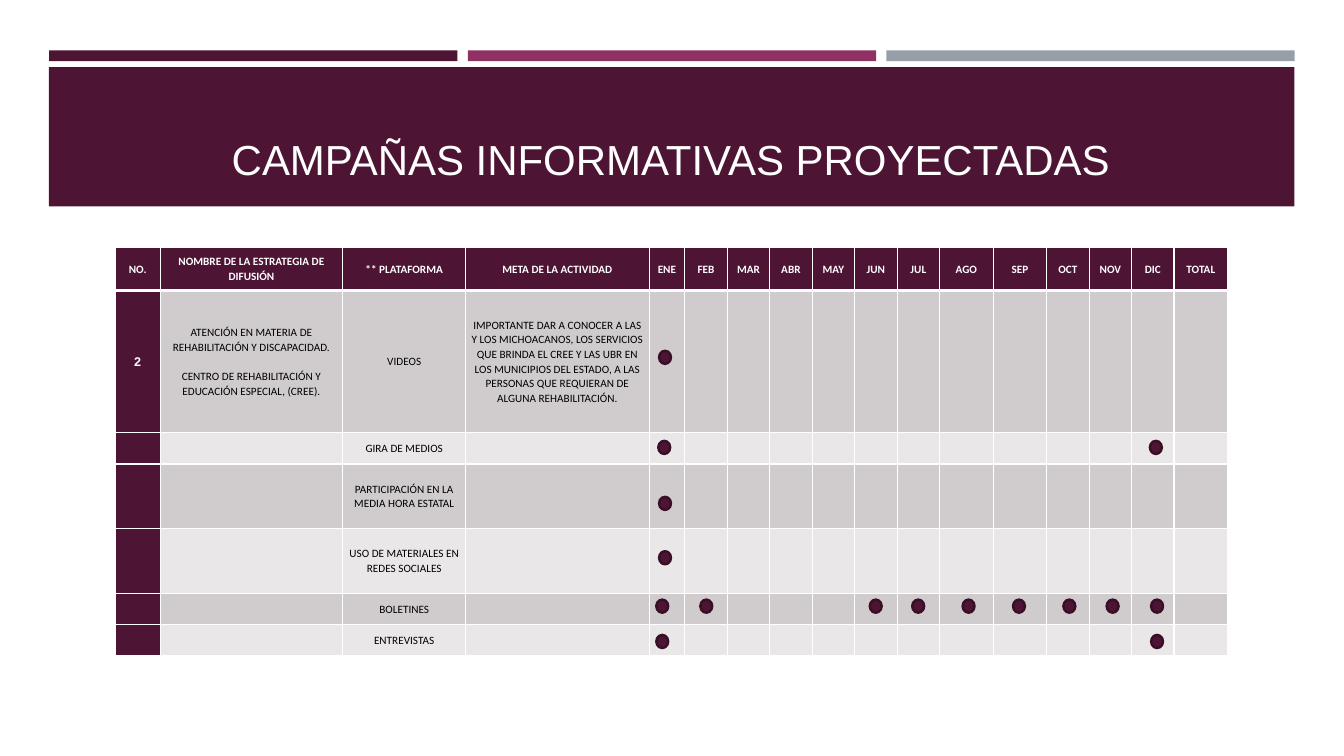
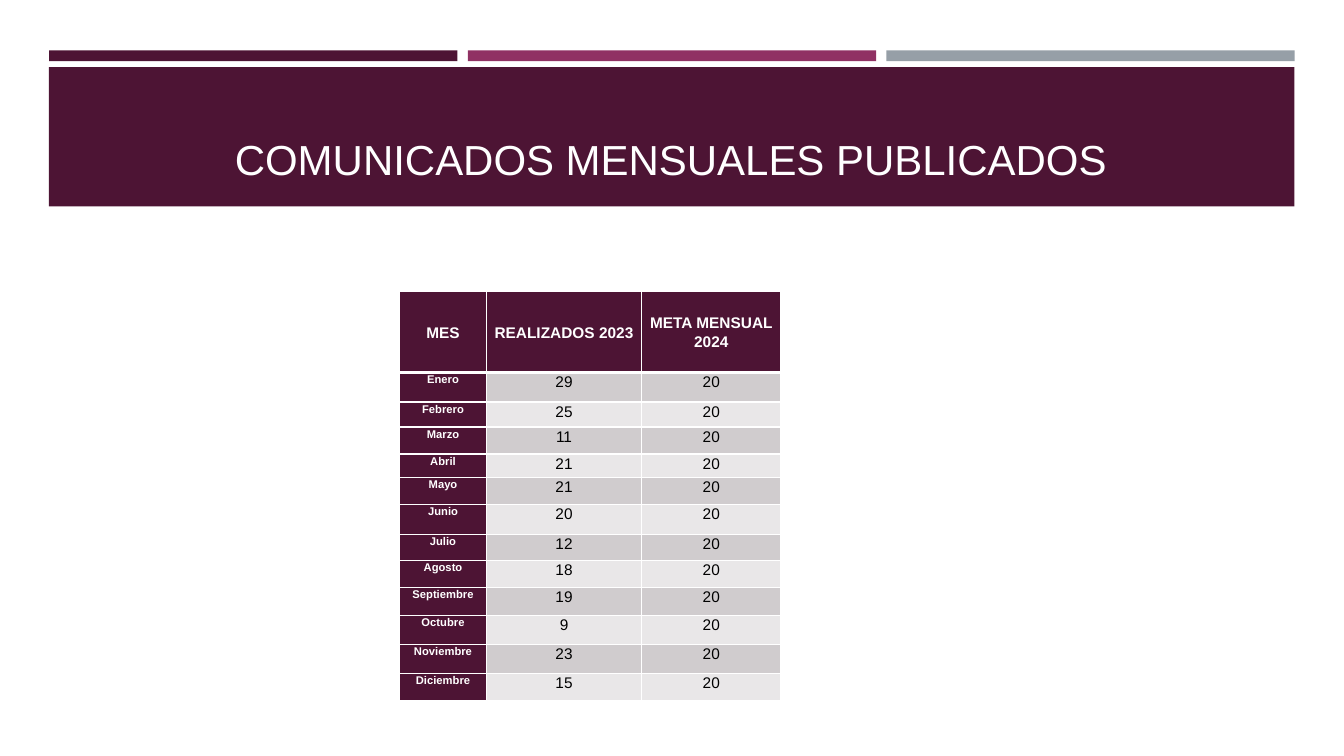
from lxml.etree import SubElement
from pptx import Presentation
from pptx.dml.color import RGBColor
from pptx.enum.shapes import MSO_SHAPE as SHAPE
from pptx.enum.text import MSO_ANCHOR as ANCHOR, PP_ALIGN as ALIGN
from pptx.oxml.ns import qn
from pptx.util import Cm, Pt

CLARET = RGBColor(0x4D, 0x14, 0x34)
CLARET_DARK = RGBColor(0x39, 0x0F, 0x26)
PLUM = RGBColor(0x90, 0x31, 0x63)
STEEL = RGBColor(0x96, 0x9F, 0xA7)
WHITE = RGBColor(0xFF, 0xFF, 0xFF)
BLACK = RGBColor(0, 0, 0)
STRIPES = (RGBColor(0xE9, 0xE7, 0xE8), RGBColor(0xD0, 0xCC, 0xCE))

BAND_LEFT, BAND_PITCH, BAND_WIDTH = 1.24, 10.55, 10.29
LINE_SPACING = 1.07

CAMPAIGN_WIDTHS = [1.14, 4.6, 3.1, 4.62, 0.9] + [1.07] * 6 + [1.35] * 2 + [1.07] * 3 + [1.35]
CAMPAIGN_HEIGHTS = [1.09, 3.58, 0.79, 1.63, 1.63, 0.79, 0.79]
CAMPAIGN_HEADER = [
    "NO.", "NOMBRE DE LA ESTRATEGIA DE DIFUSIÓN", "** PLATAFORMA", "META DE LA ACTIVIDAD",
    "ENE", "FEB", "MAR", "ABR", "MAY", "JUN", "JUL", "AGO", "SEP", "OCT", "NOV", "DIC", "TOTAL",
]
STRATEGY = (
    "ATENCIÓN EN MATERIA DE REHABILITACIÓN Y DISCAPACIDAD.\n"
    "CENTRO DE REHABILITACIÓN Y EDUCACIÓN ESPECIAL, (CREE)."
)
GOAL = (
    "IMPORTANTE DAR A CONOCER A LAS Y LOS MICHOACANOS, LOS SERVICIOS QUE BRINDA EL CREE "
    "Y LAS UBR EN LOS MUNICIPIOS DEL ESTADO, A LAS PERSONAS QUE REQUIERAN DE ALGUNA "
    "REHABILITACIÓN."
)
OTHER_PLATFORMS = [
    "GIRA DE MEDIOS", "PARTICIPACIÓN EN LA MEDIA HORA ESTATAL",
    "USO DE MATERIALES EN REDES SOCIALES", "BOLETINES", "ENTREVISTAS",
]
# Top of each platform's markers, then the left edge of every marker
MARKERS = [
    (8.84, [16.61]),
    (11.11, [16.59, 28.98]),
    (12.52, [16.61]),
    (13.89, [16.61]),
    (15.11, [16.54, 17.65, 21.92, 22.99, 24.26, 25.53, 26.8, 27.89, 29.01]),
    (16.0, [16.54, 29.01]),
]

RELEASE_WIDTHS = [2.19, 3.91, 3.51]
RELEASE_HEIGHTS = [2.04, 0.74, 0.63, 0.68, 0.59, 0.69, 0.74, 0.66, 0.68, 0.72, 0.72, 0.73, 0.68]
RELEASE_HEADER = ["MES", "REALIZADOS 2023", "META MENSUAL 2024"]
RELEASES = {
    "Enero": 29, "Febrero": 25, "Marzo": 11, "Abril": 21, "Mayo": 21, "Junio": 20,
    "Julio": 12, "Agosto": 18, "Septiembre": 19, "Octubre": 9, "Noviembre": 23, "Diciembre": 15,
}
MONTHLY_GOAL = 20


def set_format(target, values):
    for name, value in values.items():
        setattr(target, name, value)


def add_filled(slide, preset, left, top, width, height, fill):
    shape = slide.shapes.add_shape(preset, Cm(left), Cm(top), Cm(width), Cm(height))
    shape.shadow.inherit = False
    shape.fill.solid()
    shape.fill.fore_color.rgb = fill
    shape.line.fill.background()
    return shape


def write_paragraph(paragraph, text, color, font_format):
    paragraph.alignment = ALIGN.CENTER
    run = paragraph.add_run()
    run.text = text
    set_format(run.font, font_format)
    run.font.color.rgb = color


def add_titled_slide(prs, title):
    slide = prs.slides.add_slide(prs.slide_layouts[6])
    for i, color in enumerate((CLARET, PLUM, STEEL)):
        add_filled(slide, SHAPE.RECTANGLE, BAND_LEFT + i * BAND_PITCH, 1.27,
                   BAND_WIDTH, 0.27, color)
    add_filled(slide, SHAPE.RECTANGLE, 1.23, 1.69, 31.39, 3.51, CLARET)
    frame = slide.shapes.add_textbox(Cm(1.6), Cm(2.03), Cm(30.63), Cm(2.74)).text_frame
    set_format(frame, {"word_wrap": True, "vertical_anchor": ANCHOR.BOTTOM})
    write_paragraph(frame.paragraphs[0], title, WHITE, {"name": "Arial", "size": Pt(30)})
    return slide


def set_borders(cell, row):
    """White rules all round, with a thick one under the header row."""
    thick_side = {0: "B", 1: "T"}.get(row)
    properties = cell._tc.get_or_add_tcPr()
    for side in "LRTB":
        width = Pt(3 if side == thick_side else 1)
        line = SubElement(properties, qn(f"a:ln{side}"), w=str(width))
        SubElement(SubElement(line, qn("a:solidFill")), qn("a:srgbClr"), val=str(WHITE))


def write_cell(cell, text, color, font_format, paragraph_gap):
    for i, line in enumerate(text.split("\n")):
        frame = cell.text_frame
        paragraph = frame.add_paragraph() if i else frame.paragraphs[0]
        paragraph.line_spacing = LINE_SPACING
        if i:
            paragraph.space_before = paragraph_gap
        if line:
            write_paragraph(paragraph, line, color, font_format)
        else:  # keeps an empty cell from stretching its row
            paragraph._p.get_or_add_endParaRPr().set("sz", "800")


def add_grid(slide, left, top, widths, heights, rows, margin, font_for, body_anchor):
    """Striped table; font_for(row, column) gives the font name and size."""
    table = slide.shapes.add_table(len(rows), len(widths), Cm(left), Cm(top),
                                   Cm(sum(widths)), Cm(sum(heights))).table
    for column, width in zip(table.columns, widths):
        column.width = Cm(width)
    for table_row, height in zip(table.rows, heights):
        table_row.height = Cm(height)
    for r, texts in enumerate(rows):
        for c, text in enumerate(texts):
            cell = table.cell(r, c)
            is_heading = r == 0 or c == 0
            set_format(cell, {
                "margin_left": Cm(margin), "margin_right": Cm(margin),
                "margin_top": 0, "margin_bottom": 0,
                "vertical_anchor": body_anchor if r else ANCHOR.MIDDLE,
            })
            set_borders(cell, r)
            cell.fill.solid()
            cell.fill.fore_color.rgb = CLARET if is_heading else STRIPES[r % 2]
            name, size = font_for(r, c)
            write_cell(cell, text, WHITE if is_heading else BLACK,
                       {"name": name, "size": Pt(size), "bold": is_heading}, Pt(10.4))


def add_marker(slide, left, top):
    marker = add_filled(slide, SHAPE.OVAL, left, top, 0.3, 0.33, CLARET)
    marker.line.color.rgb = CLARET_DARK
    marker.line.width = Pt(1.75)


def campaign_font(row, column):
    return ("Arial", 9) if row and column == 0 else ("Calibri", 8)


def release_font(row, column):
    return "Arial", 8 if row and column == 0 else 11


def add_campaigns(prs):
    slide = add_titled_slide(prs, "CAMPAÑAS INFORMATIVAS PROYECTADAS")
    first_months = CAMPAIGN_HEADER.index("ENE")
    blank_months = [""] * (len(CAMPAIGN_HEADER) - first_months)
    rows = [CAMPAIGN_HEADER, ["2", STRATEGY, "VIDEOS", GOAL] + blank_months]
    rows += [["", "", platform, ""] + blank_months for platform in OTHER_PLATFORMS]
    add_grid(slide, 2.9, 6.23, CAMPAIGN_WIDTHS, CAMPAIGN_HEIGHTS, rows, 0.12,
             campaign_font, ANCHOR.MIDDLE)
    for top, lefts in MARKERS:
        for left in lefts:
            add_marker(slide, left, top)


def add_releases(prs):
    slide = add_titled_slide(prs, "COMUNICADOS MENSUALES PUBLICADOS")
    rows = [RELEASE_HEADER]
    rows += [[month, str(done), str(MONTHLY_GOAL)] for month, done in RELEASES.items()]
    add_grid(slide, 10.07, 7.35, RELEASE_WIDTHS, RELEASE_HEIGHTS, rows, 0.17,
             release_font, ANCHOR.TOP)


def main():
    prs = Presentation()
    prs.slide_width, prs.slide_height = Cm(33.87), Cm(19.05)
    add_campaigns(prs)
    add_releases(prs)
    prs.save("out.pptx")


if __name__ == "__main__":
    main()
